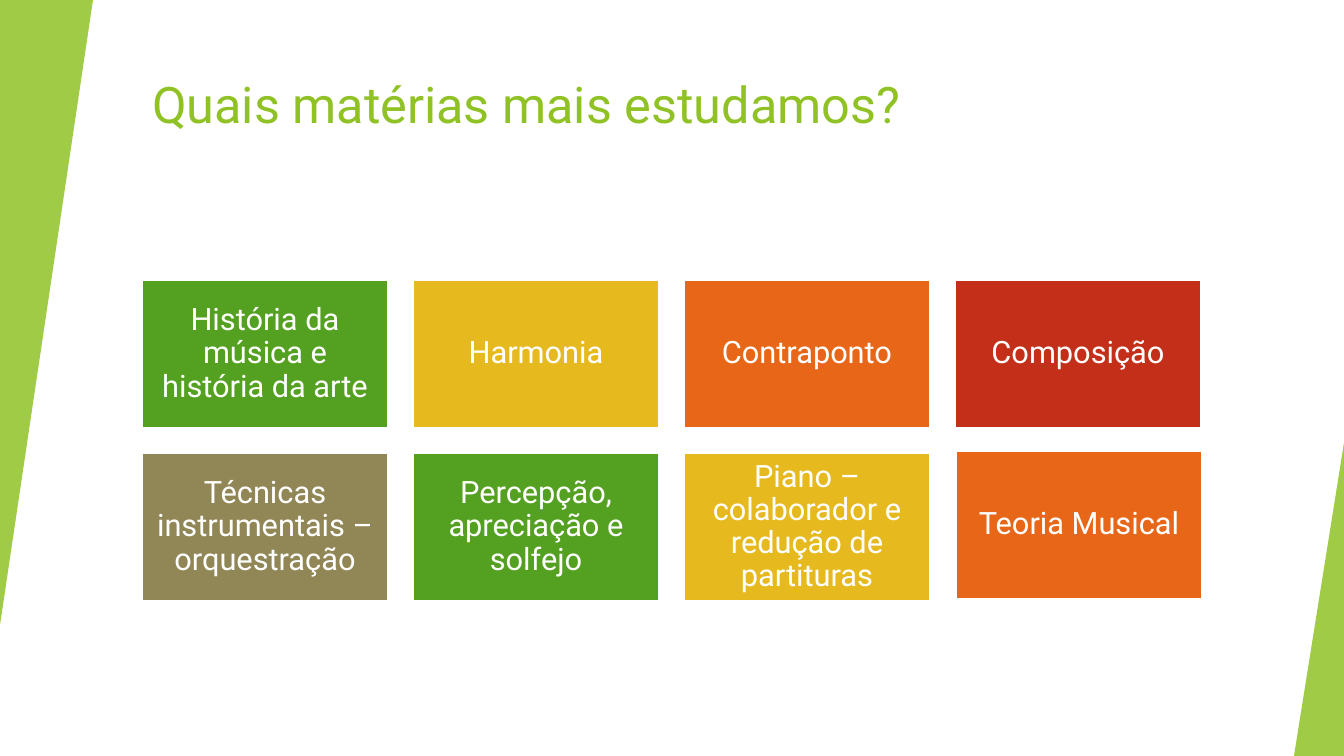
from dataclasses import dataclass

from lxml import etree
from pptx import Presentation
from pptx import util as u
from pptx.dml.color import RGBColor
from pptx.enum import shapes, text
from pptx.oxml.ns import qn

EMU_PER_PX = 914400 / 100.8
FONT = "Roboto"
LIME, GREEN, YELLOW = "90C226", "54A021", "E6B91E"
ORANGE, RED, OLIVE, WHITE = "E76618", "C42F1A", "918655", "FFFFFF"

COLUMNS = 4
LEFT, TOP = 142, 280
TILE_W, TILE_H = 246, 148
PITCH_X, PITCH_Y = 271, 173


@dataclass(frozen=True)
class Tile:
    label: str
    fill: str
    dx: int = 0
    dy: int = 0


@dataclass(frozen=True)
class Wedge:
    x: int
    y: int
    w: int
    h: int
    rotation: int


TILES = [
    Tile("História da música e história da arte", GREEN),
    Tile("Harmonia", YELLOW),
    Tile("Contraponto", ORANGE),
    Tile("Composição", RED),
    Tile("Técnicas instrumentais – orquestração", OLIVE),
    Tile("Percepção, apreciação e solfejo", GREEN),
    Tile("Piano – colaborador e redução de partituras", YELLOW),
    Tile("Teoria Musical", ORANGE, dx=1, dy=-2),
]
WEDGES = [Wedge(0, 0, 93, 625, 180), Wedge(1294, 443, 50, 313, 0)]


def px(n: int) -> u.Emu:
    return u.Emu(round(n * EMU_PER_PX))


def rgb(value: str) -> RGBColor:
    return RGBColor.from_string(value)


def apply(target, values: dict) -> None:
    for name, value in values.items():
        setattr(target, name, value)


def write(sp, label: str, size: int, color: str, frame: dict, paragraph: dict) -> None:
    tf = sp.text_frame
    apply(tf, {"word_wrap": True, "auto_size": text.MSO_AUTO_SIZE.NONE, **frame})
    p = tf.paragraphs[0]
    apply(p, paragraph)
    r = p.add_run()
    r.text = label
    apply(r.font, {"size": u.Pt(size), "name": FONT})
    r.font.color.rgb = rgb(color)


def add_filled(s, kind, x: int, y: int, w: int, h: int, fill: str):
    sp = s.shapes.add_shape(kind, px(x), px(y), px(w), px(h))
    sp.shadow.inherit = False
    sp.fill.solid()
    sp.fill.fore_color.rgb = rgb(fill)
    return sp


def add_wedge(s, wedge: Wedge) -> None:
    sp = add_filled(s, shapes.MSO_SHAPE.ISOSCELES_TRIANGLE,
                    wedge.x, wedge.y, wedge.w, wedge.h, LIME)
    sp.adjustments[0] = 1
    sp.rotation = wedge.rotation
    sp.line.fill.background()
    color = sp.fill._xPr.find(qn("a:solidFill"))[0]
    etree.SubElement(color, qn("a:alpha"), val="85000")


def add_tile(s, index: int, tile: Tile) -> None:
    row, column = divmod(index, COLUMNS)
    sp = add_filled(s, shapes.MSO_SHAPE.RECTANGLE,
                    LEFT + column * PITCH_X + tile.dx, TOP + row * PITCH_Y + tile.dy,
                    TILE_W, TILE_H, tile.fill)
    sp.line.color.rgb = rgb(WHITE)
    sp.line.width = u.Pt(1.5)
    margins = {f"margin_{side}": px(9) for side in ("left", "right", "top", "bottom")}
    write(sp, tile.label, 22, WHITE,
          {"vertical_anchor": text.MSO_ANCHOR.MIDDLE, **margins},
          {"alignment": text.PP_ALIGN.CENTER, "line_spacing": 0.9})


def main() -> None:
    prs = Presentation()
    apply(prs, {"slide_width": px(1344), "slide_height": px(756)})
    s = prs.slides.add_slide(prs.slide_layouts[5])
    title = s.shapes.title
    apply(title, {"left": px(LEFT), "top": px(68), "width": px(1124), "height": px(121)})
    write(title, "Quais matérias mais estudamos?", 36, LIME,
          {"vertical_anchor": text.MSO_ANCHOR.TOP},
          {"alignment": text.PP_ALIGN.LEFT})
    for wedge in WEDGES:
        add_wedge(s, wedge)
    for index, tile in enumerate(TILES):
        add_tile(s, index, tile)
    prs.save("out.pptx")


if __name__ == "__main__":
    main()
